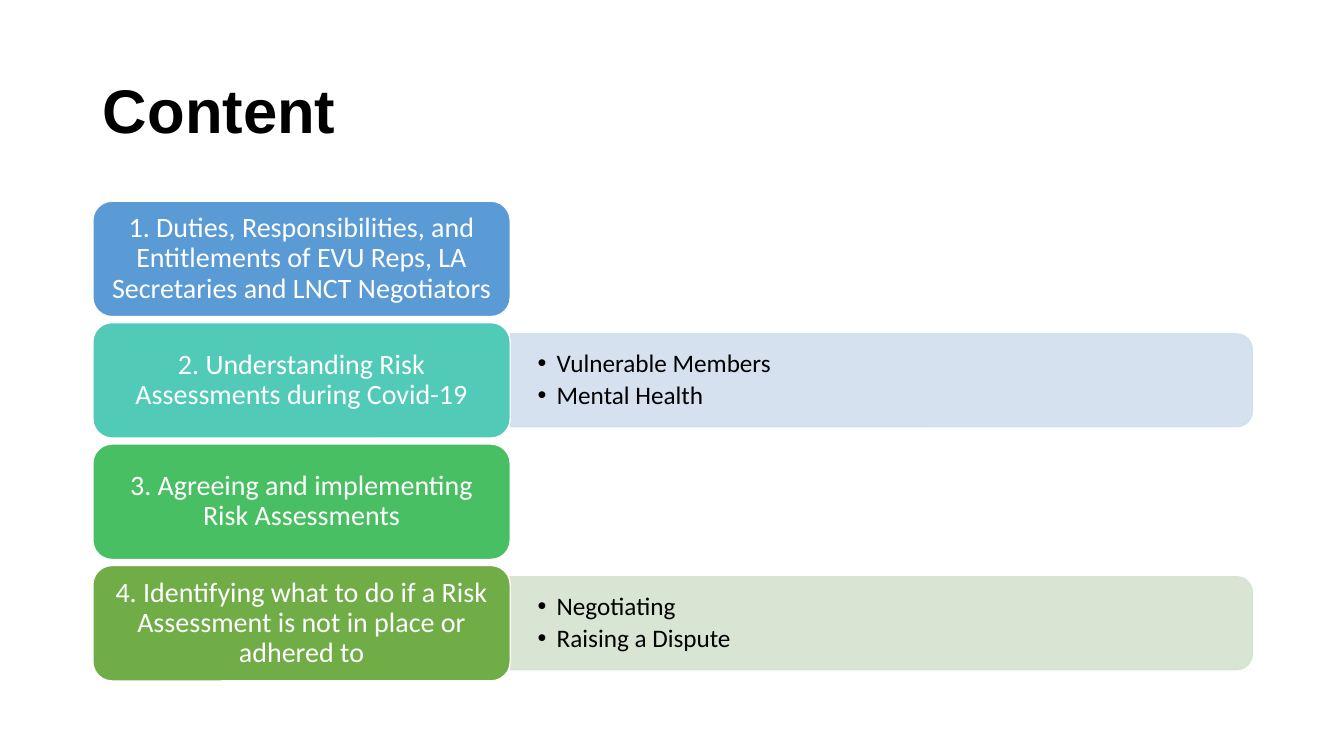
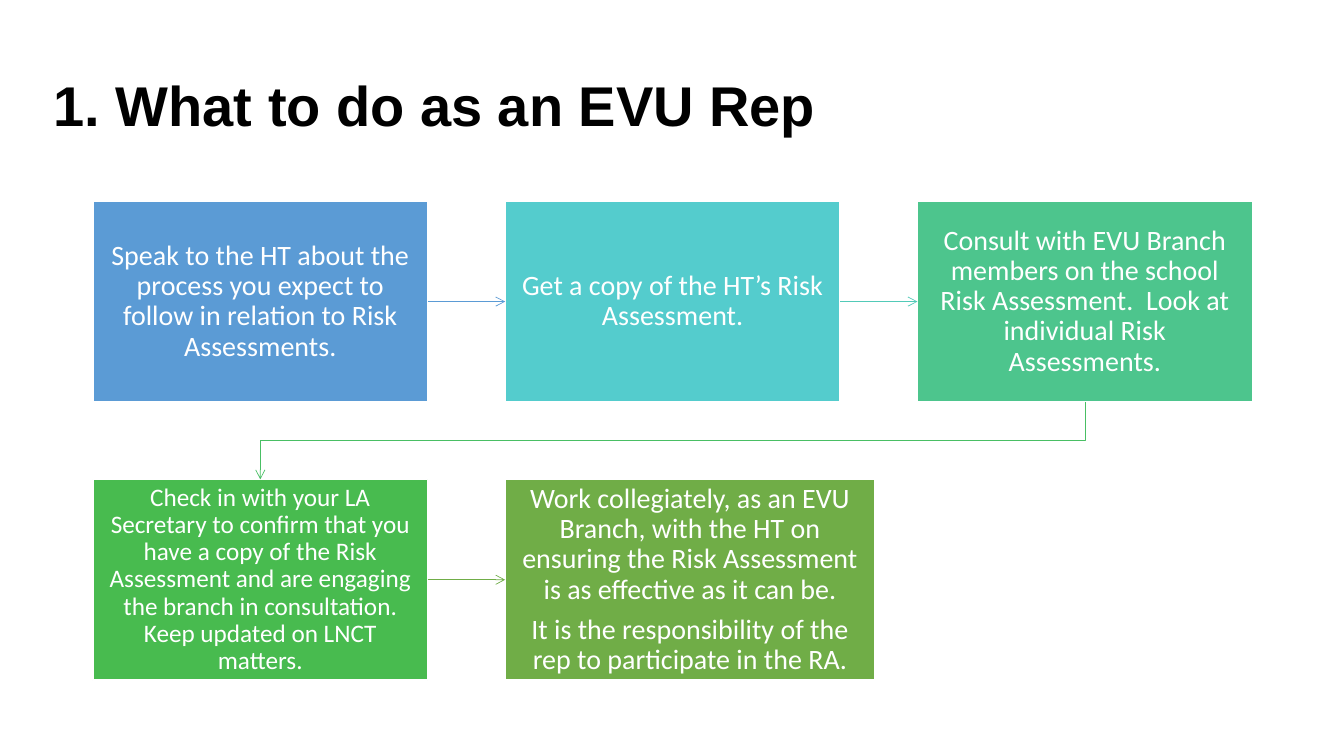
from lxml import etree
from pptx import Presentation
from pptx.dml.color import RGBColor
from pptx.enum.shapes import MSO_CONNECTOR, MSO_SHAPE
from pptx.enum.text import MSO_ANCHOR, MSO_AUTO_SIZE, PP_ALIGN
from pptx.oxml.ns import qn
from pptx.util import Cm, Pt

LEFT, CENTER = PP_ALIGN.LEFT, PP_ALIGN.CENTER
MIDDLE = MSO_ANCHOR.MIDDLE
NO_AUTOFIT = MSO_AUTO_SIZE.NONE
RECT, ROUNDED = MSO_SHAPE.RECTANGLE, MSO_SHAPE.ROUNDED_RECTANGLE
TWO_ROUNDED = MSO_SHAPE.ROUND_2_SAME_RECTANGLE
STRAIGHT, ELBOW = MSO_CONNECTOR.STRAIGHT, MSO_CONNECTOR.ELBOW
TOP_SIDE, LEFT_SIDE, BOTTOM_SIDE, RIGHT_SIDE = range(4)

# Shared look
TITLE_FONT, BODY_FONT = "Arial", "Calibri"
WHITE, BLACK = "FFFFFF", "000000"
BLUE, TEAL, GREEN, OLIVE = "5B9BD5", "52CAB8", "49BF64", "70AD47"
MARGIN, CONTENT_TOP = 2.34, 5.07

# Topic list, in cm: label, colour, panel colour, subtopics
TOPIC_WIDTH, TOPIC_HEIGHT, TOPIC_PITCH = 10.52, 2.91, 3.06
PANEL_WIDTH, PANEL_HEIGHT = 18.7, 2.34
TOPICS = [
    ("1. Duties, Responsibilities, and Entitlements of EVU Reps, "
     "LA Secretaries and LNCT Negotiators", BLUE, None, []),
    ("2. Understanding Risk Assessments during Covid-19", TEAL, "D2DEEF",
     ["Vulnerable Members", "Mental Health"]),
    ("3. Agreeing and implementing Risk Assessments", GREEN, None, []),
    ("4. Identifying what to do if a Risk Assessment is not in place or "
     "adhered to", OLIVE, "D5E3CF", ["Negotiating", "Raising a Dispute"]),
]

# Process steps, in cm: paragraphs, fill, text size, width
STEP_WIDTH, STEP_HEIGHT = 8.44, 5.06
STEP_PITCH_X, STEP_PITCH_Y, STEPS_PER_ROW = 10.39, 7.01, 3
STEPS = [
    (["Speak to the HT about the process you expect to follow in relation "
      "to Risk Assessments."], BLUE, 20, STEP_WIDTH),
    (["Get a copy of the HT’s Risk Assessment."], "54CCCD", 20, STEP_WIDTH),
    (["Consult with EVU Branch members on the school Risk Assessment.  "
      "Look at individual Risk Assessments."], "4DC58D", 20, STEP_WIDTH),
    (["Check in with your LA Secretary to confirm that you have a copy of "
      "the Risk Assessment and are engaging the branch in consultation. "
      "Keep updated on LNCT matters."], "48BB4F", 18, STEP_WIDTH),
    (["Work collegiately, as an EVU Branch, with the HT on ensuring the "
      "Risk Assessment is as effective as it can be.",
      "It is the responsibility of the rep to participate in the RA."],
     OLIVE, 20, 9.32),
]
ARROW_COLOURS = [BLUE, TEAL, GREEN, OLIVE]


def rgb(hex_colour):
    return RGBColor.from_string(hex_colour)


def write(frame, paragraphs, size, colour=WHITE, font=BODY_FONT, bold=False,
          align=CENTER, inset=None, gap=0):
    """Fill a text frame, one paragraph per string."""
    frame.word_wrap = True
    frame.auto_size = NO_AUTOFIT
    frame.vertical_anchor = MIDDLE
    if inset:
        frame.margin_left = frame.margin_right = Cm(inset[0])
        frame.margin_top = frame.margin_bottom = Cm(inset[1])
    frame.text = "\n".join(paragraphs)
    for paragraph in frame.paragraphs:
        paragraph.alignment = align
        paragraph.line_spacing = 0.9
        paragraph.space_after = Pt(gap)
        for run in paragraph.runs:
            run.font.name = font
            run.font.size = Pt(size)
            run.font.bold = bold
            run.font.color.rgb = rgb(colour)


def add_bullets(frame):
    for paragraph in frame.paragraphs:
        properties = paragraph._p.get_or_add_pPr()
        properties.set("marL", str(Cm(0.48)))
        properties.set("indent", str(-Cm(0.48)))
        etree.SubElement(properties, qn("a:buFont")).set("typeface", "Arial")
        etree.SubElement(properties, qn("a:buChar")).set("char", "•")


def add_titled_slide(prs, title, size, left, top, width):
    slide = prs.slides.add_slide(prs.slide_layouts[5])
    heading = slide.shapes.title
    heading.left, heading.top = Cm(left), Cm(top)
    heading.width, heading.height = Cm(width), Cm(3.68)
    write(heading.text_frame, [title], size, BLACK, TITLE_FONT, True, LEFT)
    return slide


def add_box(slide, preset, left, top, width, height, fill, line=WHITE):
    box = slide.shapes.add_shape(preset, Cm(left), Cm(top), Cm(width), Cm(height))
    box.shadow.inherit = False
    box.fill.solid()
    box.fill.fore_color.rgb = rgb(fill)
    box.line.color.rgb = rgb(line)
    box.line.width = Pt(1)
    return box


def add_panel(slide, left, top, colour, subtopics):
    """Pale panel, rounded on its right side, with a bulleted list."""
    # The preset is drawn upright and turned a quarter about its centre
    shift = (PANEL_WIDTH - PANEL_HEIGHT) / 2
    panel = add_box(slide, TWO_ROUNDED, left + shift, top - shift,
                    PANEL_HEIGHT, PANEL_WIDTH, colour, colour)
    panel.rotation = 90
    for tint in panel._element.spPr.iter(qn("a:srgbClr")):
        etree.SubElement(tint, qn("a:alpha")).set("val", "90000")
    listing = slide.shapes.add_textbox(Cm(left), Cm(top), Cm(PANEL_WIDTH),
                                       Cm(PANEL_HEIGHT)).text_frame
    write(listing, subtopics, 18, BLACK, align=LEFT, inset=(0.69, 0.36), gap=3)
    add_bullets(listing)


def add_arrow(slide, kind, source, source_side, target, target_side, colour):
    arrow = slide.shapes.add_connector(kind, 0, 0, 0, 0)
    arrow.begin_connect(source, source_side)
    arrow.end_connect(target, target_side)
    arrow.line.color.rgb = rgb(colour)
    arrow.line.width = Pt(0.5)
    etree.SubElement(arrow.line._get_or_add_ln(), qn("a:tailEnd")).set("type", "arrow")
    etree.SubElement(arrow._element.spPr, qn("a:effectLst"))
    return arrow


def turn_downward(arrow):
    """Make an elbow that runs down and left start and end vertically."""
    width, height = arrow.width, arrow.height
    shift = (width - height) // 2
    left, top = arrow.left + shift, arrow.top - shift
    frame = arrow._element.spPr.find(qn("a:xfrm"))
    frame.attrib.pop("flipH", None)
    frame.set("rot", "5400000")
    arrow.left, arrow.top = left, top
    arrow.width, arrow.height = height, width


def build_content(prs):
    slide = add_titled_slide(prs, "Content", 44, MARGIN, 1.01, 29.21)
    for row, (label, colour, panel_colour, subtopics) in enumerate(TOPICS):
        top = CONTENT_TOP + row * TOPIC_PITCH
        if subtopics:
            add_panel(slide, MARGIN + TOPIC_WIDTH,
                      top + (TOPIC_HEIGHT - PANEL_HEIGHT) / 2,
                      panel_colour, subtopics)
        topic = add_box(slide, ROUNDED, MARGIN, top, TOPIC_WIDTH, TOPIC_HEIGHT, colour)
        write(topic.text_frame, [label], 20, inset=(0.2, 0.1))


def build_process(prs):
    slide = add_titled_slide(prs, "1. What to do as an EVU Rep", 40, 1.1, 0.88, 31.7)
    steps = []
    for index, (paragraphs, colour, size, width) in enumerate(STEPS):
        row, column = divmod(index, STEPS_PER_ROW)
        step = add_box(slide, RECT, MARGIN + column * STEP_PITCH_X,
                       CONTENT_TOP + row * STEP_PITCH_Y, width, STEP_HEIGHT, colour)
        write(step.text_frame, paragraphs, size, inset=(0.41, 0.43), gap=7)
        steps.append(step)

    # Arrows run along each row, then down to the start of the next
    for index, colour in enumerate(ARROW_COLOURS):
        source, target = steps[index:index + 2]
        if (index + 1) % STEPS_PER_ROW:
            add_arrow(slide, STRAIGHT, source, RIGHT_SIDE, target, LEFT_SIDE, colour)
        else:
            turn_downward(add_arrow(slide, ELBOW, source, BOTTOM_SIDE,
                                    target, TOP_SIDE, colour))


def main():
    prs = Presentation()
    prs.slide_width, prs.slide_height = Cm(33.87), Cm(19.05)
    build_content(prs)
    build_process(prs)
    prs.save("out.pptx")


if __name__ == "__main__":
    main()
